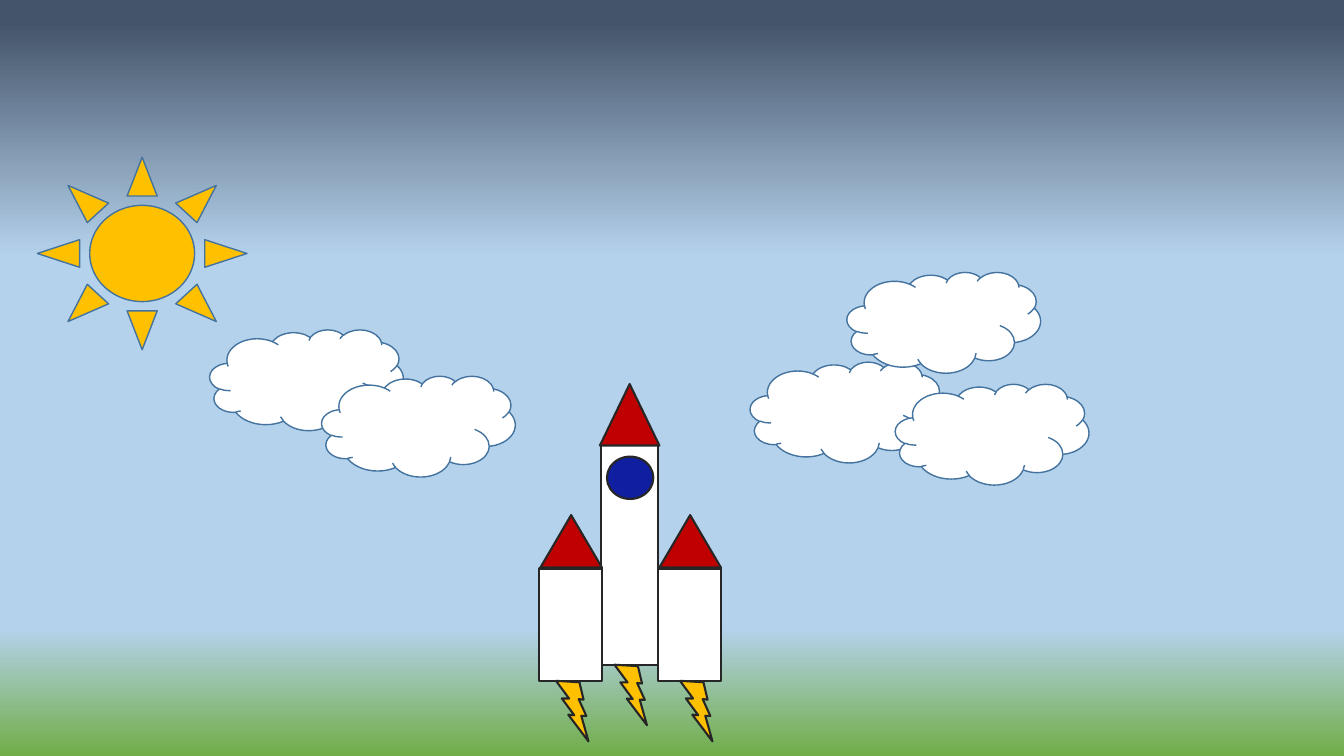
from pptx import Presentation
from pptx.dml.color import RGBColor
from pptx.enum.shapes import MSO_SHAPE as Kind
from pptx.oxml.ns import qn
from pptx.util import Inches, Pt
from lxml.etree import SubElement

WHITE = RGBColor(0xFF, 0xFF, 0xFF)
RED = RGBColor(0xC0, 0x00, 0x00)
GOLD = RGBColor(0xFF, 0xC0, 0x00)
NAVY = RGBColor(0x10, 0x1E, 0xA0)
DARK = RGBColor(0x26, 0x26, 0x26)
BLUE = RGBColor(0x43, 0x73, 0x9E)
SPACE = RGBColor(0x44, 0x54, 0x6A)
AIR = RGBColor(0xB5, 0xD2, 0xEC)
GRASS = RGBColor(0x70, 0xAD, 0x47)

SKY = [(3, SPACE), (34, AIR), (83, AIR), (100, GRASS)]
HULLS = [(5.96, 4.41, 0.57, 2.19), (5.35, 5.64, 0.62, 1.12), (6.53, 5.64, 0.62, 1.12)]
NOSES = [(5.95, 3.81, 0.59, 0.61), (5.36, 5.11, 0.61, 0.52), (6.54, 5.11, 0.61, 0.52)]
FLAMES = [(5.42, 6.77), (6, 6.61), (6.65, 6.77)]
CLOUDS = [(2.08, 3.27), (3.19, 3.73), (7.44, 3.59), (8.88, 3.81), (8.4, 2.7)]


def add_form(shapes, kind, box, color, line=DARK, width=1.5, turn=0):
    form = shapes.add_shape(kind, *map(Inches, box))
    form.shadow.inherit = False
    form.fill.solid()
    form.fill.fore_color.rgb = color
    form.line.color.rgb = line
    form.line.width = Pt(width)
    form.rotation = turn


def paint_sky(slide):
    fill = slide.background.fill
    fill.gradient()
    fill.gradient_angle = 270
    stops = next(slide.element.iter(qn("a:gsLst")))
    for stop in list(stops):
        stops.remove(stop)
    for place, color in SKY:
        stop = SubElement(stops, qn("a:gs"), pos=str(place * 1000))
        SubElement(stop, qn("a:srgbClr"), val=str(color))


def add_rocket(slide):
    shapes = slide.shapes.add_group_shape().shapes
    for box in HULLS:
        add_form(shapes, Kind.RECTANGLE, box, WHITE)
    for box in NOSES:
        add_form(shapes, Kind.ISOSCELES_TRIANGLE, box, RED)
    for spot in FLAMES:
        add_form(shapes, Kind.LIGHTNING_BOLT, (*spot, 0.55, 0.49), GOLD, turn=25.6)
    add_form(shapes, Kind.OVAL, (6.02, 4.53, 0.46, 0.42), NAVY)


def add_clouds(slide):
    shapes = slide.shapes.add_group_shape().shapes
    for spot in CLOUDS:
        add_form(shapes, Kind.CLOUD, (*spot, 1.92, 1), WHITE, BLUE, 1)


def main():
    deck = Presentation()
    deck.slide_width = Inches(13.33)
    deck.slide_height = Inches(7.5)
    slide = deck.slides.add_slide(deck.slide_layouts[6])
    paint_sky(slide)
    add_rocket(slide)
    add_clouds(slide)
    add_form(slide.shapes, Kind.SUN, (0.37, 1.56, 2.08, 1.91), GOLD, BLUE, 1)
    deck.save("out.pptx")


if __name__ == "__main__":
    main()
